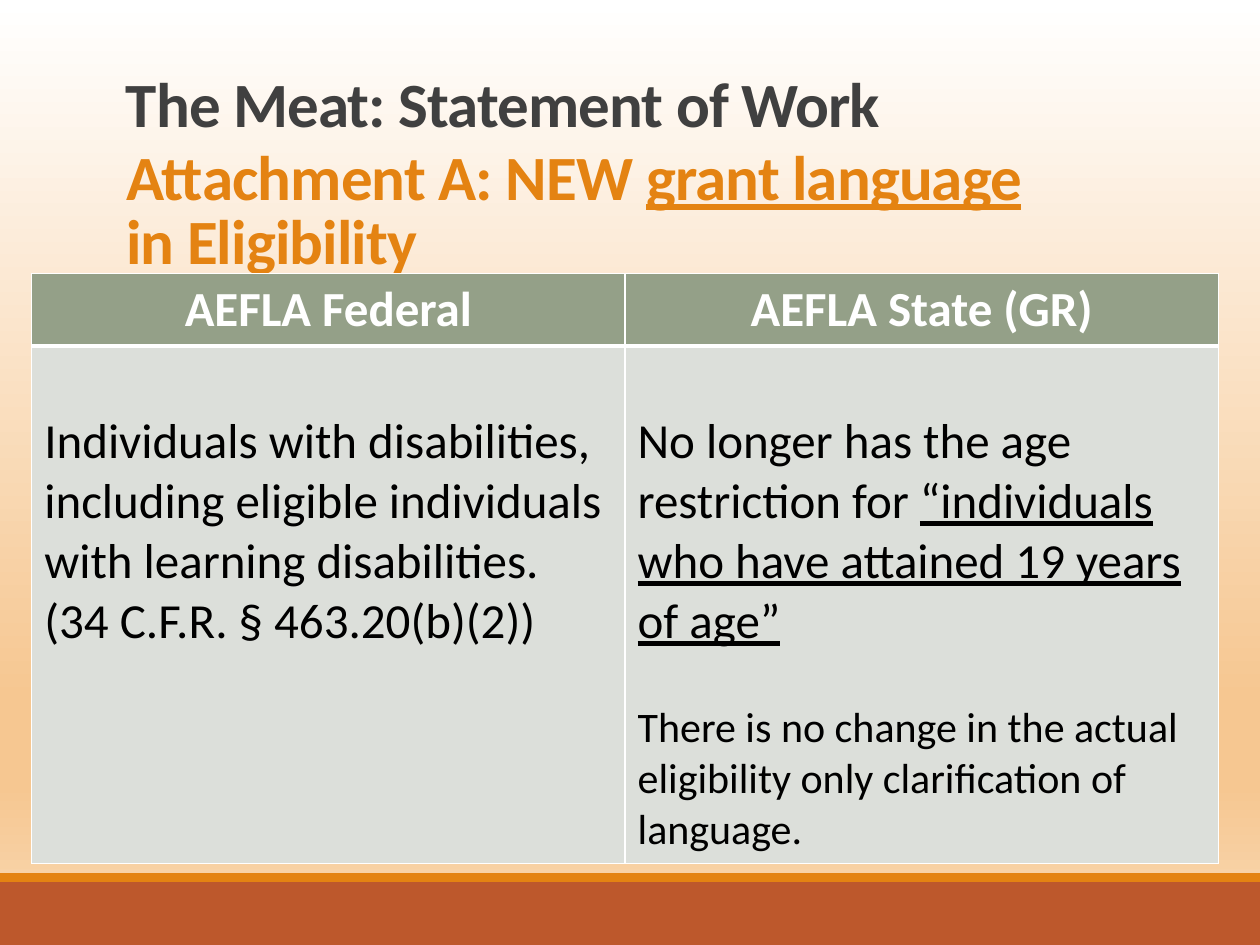
from lxml.etree import SubElement
from pptx import Presentation
from pptx.dml.color import RGBColor
from pptx.enum.shapes import MSO_SHAPE
from pptx.enum.text import MSO_ANCHOR, MSO_AUTO_SIZE, PP_ALIGN
from pptx.oxml.ns import qn
from pptx.util import Cm, Pt

WHITE = RGBColor(0xFF, 0xFF, 0xFF)
BLACK = RGBColor(0, 0, 0)
GRAY = RGBColor(0x40, 0x40, 0x40)
ORANGE = RGBColor(0xE4, 0x83, 0x12)
RUST = RGBColor(0xBD, 0x58, 0x2C)
SAGE = RGBColor(0x94, 0xA0, 0x88)
PALE = RGBColor(0xDC, 0xDF, 0xDA)
FONT = "Calibri"

STOPS = [(0, "FFFFFF"), (74, "F6C791"), (83, "F6C791"), (100, "F9DAB6")]
BANDS = [(17.78, 1.27, RUST), (17.6, 0.18, ORANGE)]
TOPIC = [("The Meat: Statement of Work", False)]
TITLE = [("Attachment A: NEW ", False), ("grant language ", True),
         ("in Eligibility", False)]
HEADS = ["AEFLA Federal", "AEFLA State (GR)"]
BODY = [
    [(28, [("Individuals with disabilities, including eligible individuals "
            "with learning disabilities. (34 C.F.R. § 463.20(b)(2))", False)])],
    [(28, [("No longer has the age restriction for ", False),
           ("“individuals who have attained 19 years of age”", True)]),
     (24, [("There is no change in the actual eligibility only "
            "clarification of language.", False)])],
]


def write(para, parts, size, color, bold=False, track=None):
    for text, under in parts:
        run = para.add_run()
        run.text = text
        font = run.font
        font.name, font.size, font.bold = FONT, Pt(size), bold
        font.color.rgb = color
        font.underline = under
        if track:
            run._r.get_or_add_rPr().set("spc", str(track))


def head(shape, box, parts, color):
    shape.left, shape.top, shape.width, shape.height = map(Cm, box)
    frame = shape.text_frame
    frame.word_wrap = True
    frame.auto_size = MSO_AUTO_SIZE.NONE
    frame.vertical_anchor = MSO_ANCHOR.BOTTOM
    para = frame.paragraphs[0]
    para.alignment = PP_ALIGN.LEFT
    para.line_spacing = 0.85
    write(para, parts, 36, color, True, -50)


def shade(slide):
    slide.background.fill.solid()
    back = slide._element.find(".//" + qn("p:bgPr"))
    back.remove(back[0])
    grad = back.makeelement(qn("a:gradFill"), {"rotWithShape": "1"})
    back.insert(0, grad)
    stops = SubElement(grad, qn("a:gsLst"))
    for pos, color in STOPS:
        stop = SubElement(stops, qn("a:gs"), pos=str(pos * 1000))
        SubElement(stop, qn("a:srgbClr"), val=color)
    SubElement(grad, qn("a:lin"), ang="5400000", scaled="0")


def paint(cell, color, base):
    props = cell._tc.get_or_add_tcPr()
    for side, width in (("L", 1), ("R", 1), ("T", 1), ("B", base)):
        line = SubElement(props, qn("a:ln" + side), w=str(Pt(width)))
        fill = SubElement(line, qn("a:solidFill"))
        SubElement(fill, qn("a:srgbClr"), val=str(WHITE))
    cell.fill.solid()
    cell.fill.fore_color.rgb = color


def main():
    deck = Presentation()
    deck.slide_width, deck.slide_height = Cm(25.4), Cm(19.05)
    slide = deck.slides.add_slide(deck.slide_layouts[5])
    shapes = slide.shapes
    shade(slide)

    for top, height, color in BANDS:
        band = shapes.add_shape(MSO_SHAPE.RECTANGLE, 0, Cm(top),
                                deck.slide_width, Cm(height))
        band.shadow.inherit = False
        band.fill.solid()
        band.fill.fore_color.rgb = color
        band.line.fill.background()

    grid = shapes.add_table(2, 2, Cm(0.64), Cm(5.51),
                            Cm(23.92), Cm(11.88)).table
    grid.rows[0].height, grid.rows[1].height = Cm(1.45), Cm(10.43)
    for col, (name, paras) in enumerate(zip(HEADS, BODY)):
        cell = grid.cell(0, col)
        paint(cell, SAGE, 3)
        para = cell.text_frame.paragraphs[0]
        para.alignment = PP_ALIGN.CENTER
        write(para, [(name, False)], 28, WHITE, True)

        cell = grid.cell(1, col)
        paint(cell, PALE, 1)
        cell.margin_top = Cm(1.34)
        frame = cell.text_frame
        for row, (size, parts) in enumerate(paras):
            para = frame.add_paragraph() if row else frame.paragraphs[0]
            if row:
                para.space_before = Pt(29)
            write(para, parts, size, BLACK)

    head(shapes.title, (2.29, 3.18, 19.58, 2.54), TITLE, ORANGE)
    topic = shapes.add_textbox(0, 0, 0, 0)
    head(topic, (2.29, 0.79, 20.96, 2.16), TOPIC, GRAY)
    deck.save("out.pptx")


if __name__ == "__main__":
    main()
